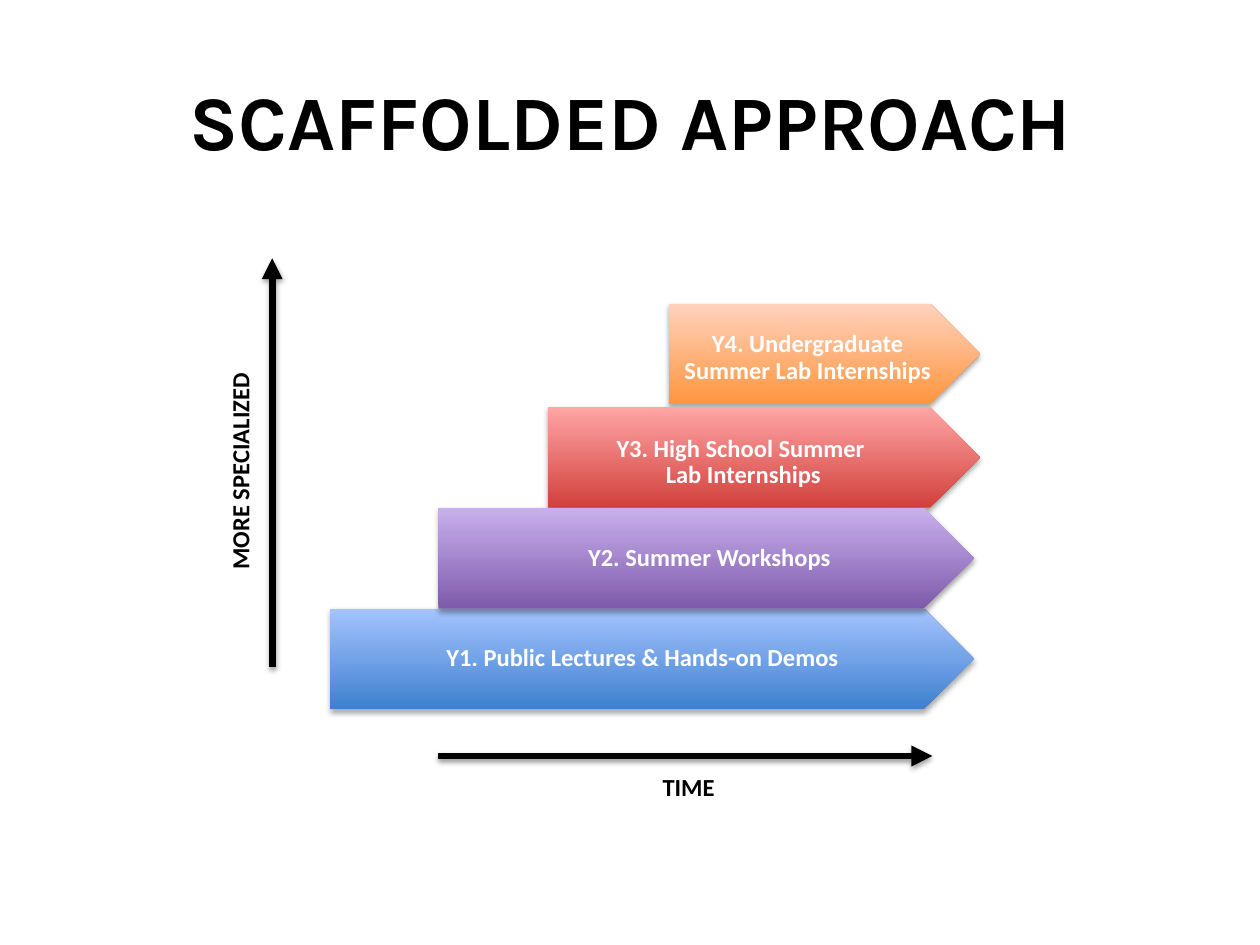
from typing import NamedTuple

from lxml.etree import SubElement
from pptx import Presentation
from pptx.dml.color import RGBColor
from pptx.enum.shapes import MSO_CONNECTOR, MSO_SHAPE
from pptx.enum.text import MSO_ANCHOR, MSO_AUTO_SIZE, PP_ALIGN
from pptx.oxml.ns import qn
from pptx.util import Inches, Pt

STEP_H = 0.8


class Step(NamedTuple):
    text: str
    left: float
    top: float
    width: float
    dark: str
    light: str
    box: tuple[float, float, float, float]


class Axis(NamedTuple):
    text: str
    start: tuple[float, float]
    end: tuple[float, float]
    box: tuple[float, float, float, float]
    turn: int


# Back to front: the lower steps overlap the shadows of their neighbours.
STEPS = [
    Step("Y4. Undergraduate\vSummer Lab Internships", 5.31, 2.41, 2.47,
         "FF953E", "FFD2BD", (4.49, 2.5, 3.79, 0.68)),
    Step("Y1. Public Lectures & Hands-on Demos", 2.62, 4.83, 5.11,
         "3F80CE", "A4C4FF", (2.62, 4.83, 4.91, 0.8)),
    Step("Y3. High School Summer \vLab Internships", 4.35, 3.23, 3.43,
         "D1403C", "FFA6A5", (3.98, 3.33, 3.79, 0.68)),
    Step("Y2. Summer Workshops", 3.48, 4.03, 4.25,
         "7F5BAB", "C8B0ED", (3.71, 4.09, 3.79, 0.68)),
]
AXES = [
    Axis("MORE SPECIALIZED", (2.16, 5.29), (2.16, 2.05),
         (0.66, 3.57, 2.49, 0.34), 270),
    Axis("TIME", (3.48, 6), (7.4, 6), (4.22, 6.08, 2.49, 0.34), 0),
]


def rgb(code: str) -> RGBColor:
    return RGBColor.from_string(code)


def place(shape, box: tuple[float, float, float, float]) -> None:
    shape.left, shape.top, shape.width, shape.height = map(Inches, box)


def write(frame, text: str, *, size: int = 14, font: str = "Calibri",
          color: str = "000000", anchor=MSO_ANCHOR.TOP,
          spacing: float | None = None) -> None:
    frame.word_wrap = True
    frame.vertical_anchor = anchor
    par = frame.paragraphs[0]
    par.text = text
    par.alignment = PP_ALIGN.CENTER
    par.line_spacing = spacing
    for run in par.runs:
        run.font.size = Pt(size)
        run.font.name = font
        run.font.bold = True
        run.font.color.rgb = rgb(color)


def shade(props, alpha: int, dist: float) -> None:
    """Add a soft black shadow that falls straight down."""
    effects = SubElement(props, qn("a:effectLst"))
    shadow = SubElement(effects, qn("a:outerShdw"), blurRad=str(Pt(3.1)),
                        dist=str(Pt(dist)), dir="5400000", rotWithShape="0")
    black = SubElement(shadow, qn("a:srgbClr"), val="000000")
    SubElement(black, qn("a:alpha"), val=str(alpha * 1000))


def add_step(shapes, step: Step) -> None:
    arrow = shapes.add_shape(
        MSO_SHAPE.PENTAGON, Inches(step.left), Inches(step.top),
        Inches(step.width), Inches(STEP_H))
    arrow.fill.gradient()
    arrow.fill.gradient_angle = 90
    for stop, color in zip(arrow.fill.gradient_stops, (step.dark, step.light)):
        stop.color.rgb = rgb(color)
    arrow.line.fill.background()
    shade(arrow.element.spPr, 35, 1.8)


def add_label(shapes, step: Step) -> None:
    frame = shapes.add_textbox(*map(Inches, step.box)).text_frame
    frame.margin_left = Inches(0.07)
    frame.margin_top = frame.margin_right = frame.margin_bottom = Inches(0.02)
    write(frame, step.text, color="FFFFFF", anchor=MSO_ANCHOR.MIDDLE,
          spacing=0.9)


def add_axis(shapes, axis: Axis) -> None:
    line = shapes.add_connector(
        MSO_CONNECTOR.STRAIGHT, *map(Inches, axis.start + axis.end))
    line.line.width = Pt(4)
    line.line.color.rgb = rgb("000000")
    props = line.element.spPr
    SubElement(props.find(qn("a:ln")), qn("a:tailEnd"), type="triangle")
    shade(props, 38, 1.6)

    label = shapes.add_textbox(*map(Inches, axis.box))
    label.rotation = axis.turn
    write(label.text_frame, axis.text)
    label.text_frame.auto_size = MSO_AUTO_SIZE.SHAPE_TO_FIT_TEXT


def main() -> None:
    deck = Presentation()
    deck.slide_width, deck.slide_height = Inches(10), Inches(7.5)
    slide = deck.slides.add_slide(deck.slide_layouts[5])
    shapes = slide.shapes

    place(shapes.title, (0.14, 0.38, 9.74, 1.14))
    write(shapes.title.text_frame, "SCAFFOLDED APPROACH", size=44,
          font="Karla", anchor=MSO_ANCHOR.MIDDLE)
    for step in STEPS:
        add_step(shapes, step)
    for step in STEPS:
        add_label(shapes, step)
    for axis in AXES:
        add_axis(shapes, axis)
    deck.save("out.pptx")


if __name__ == "__main__":
    main()
